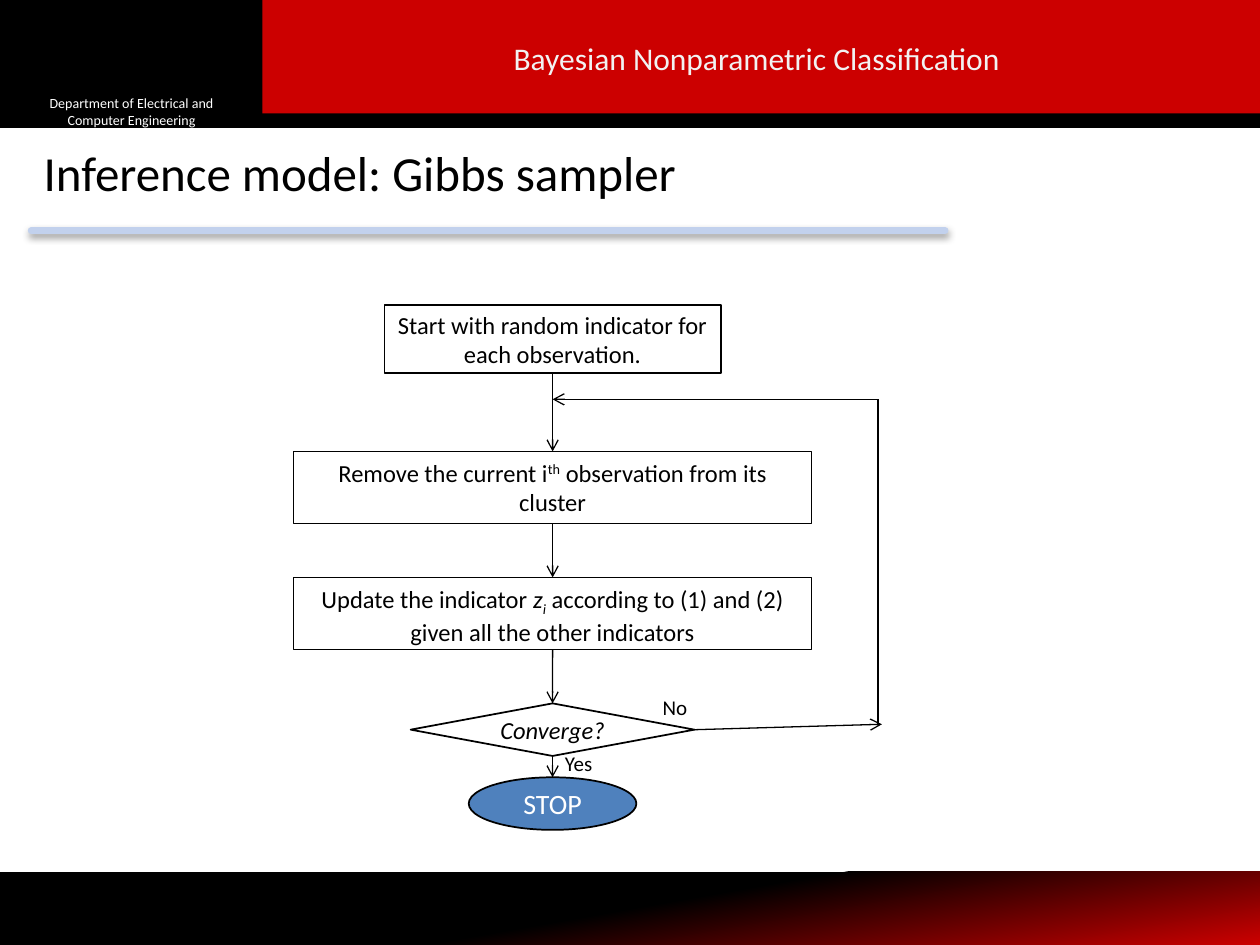
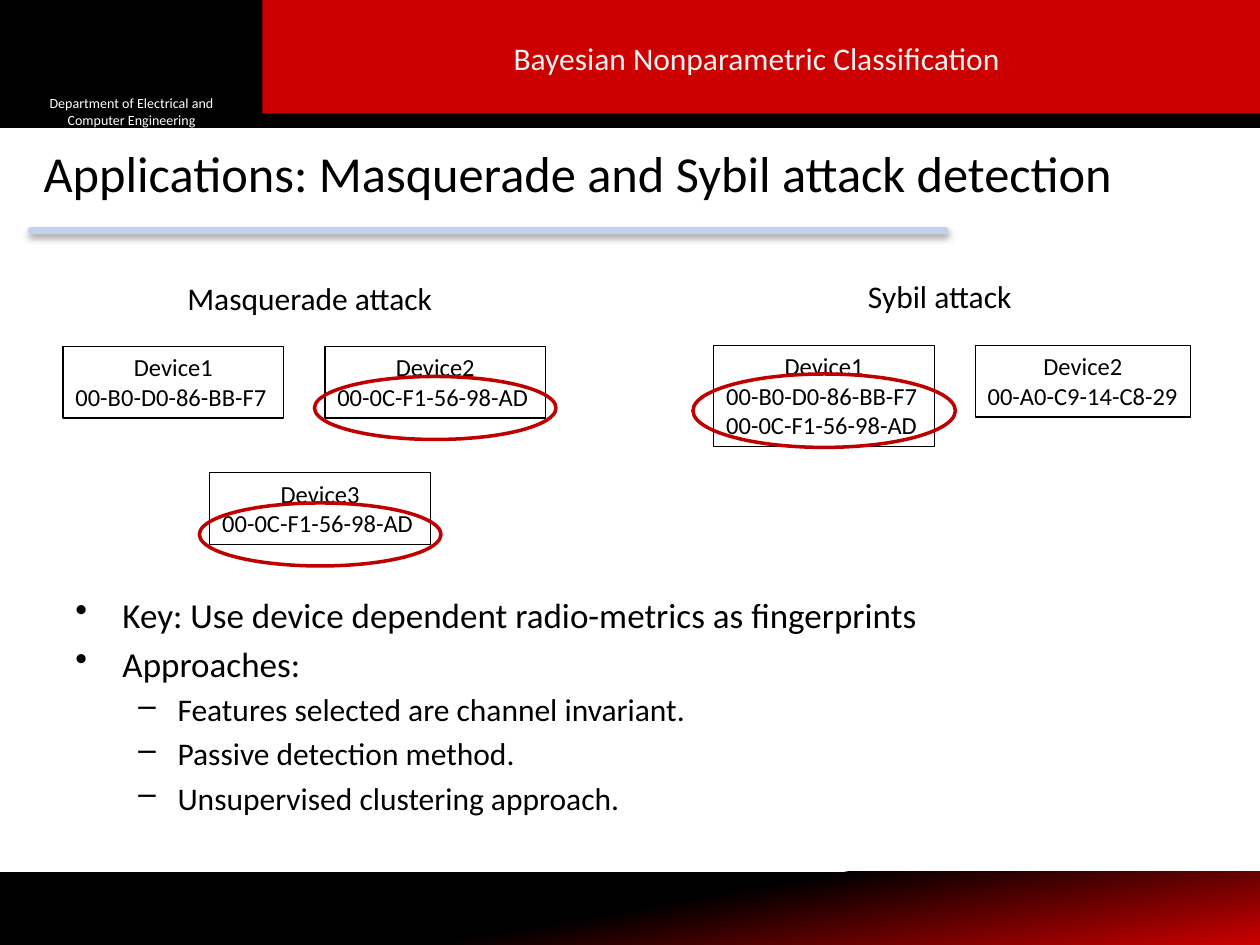
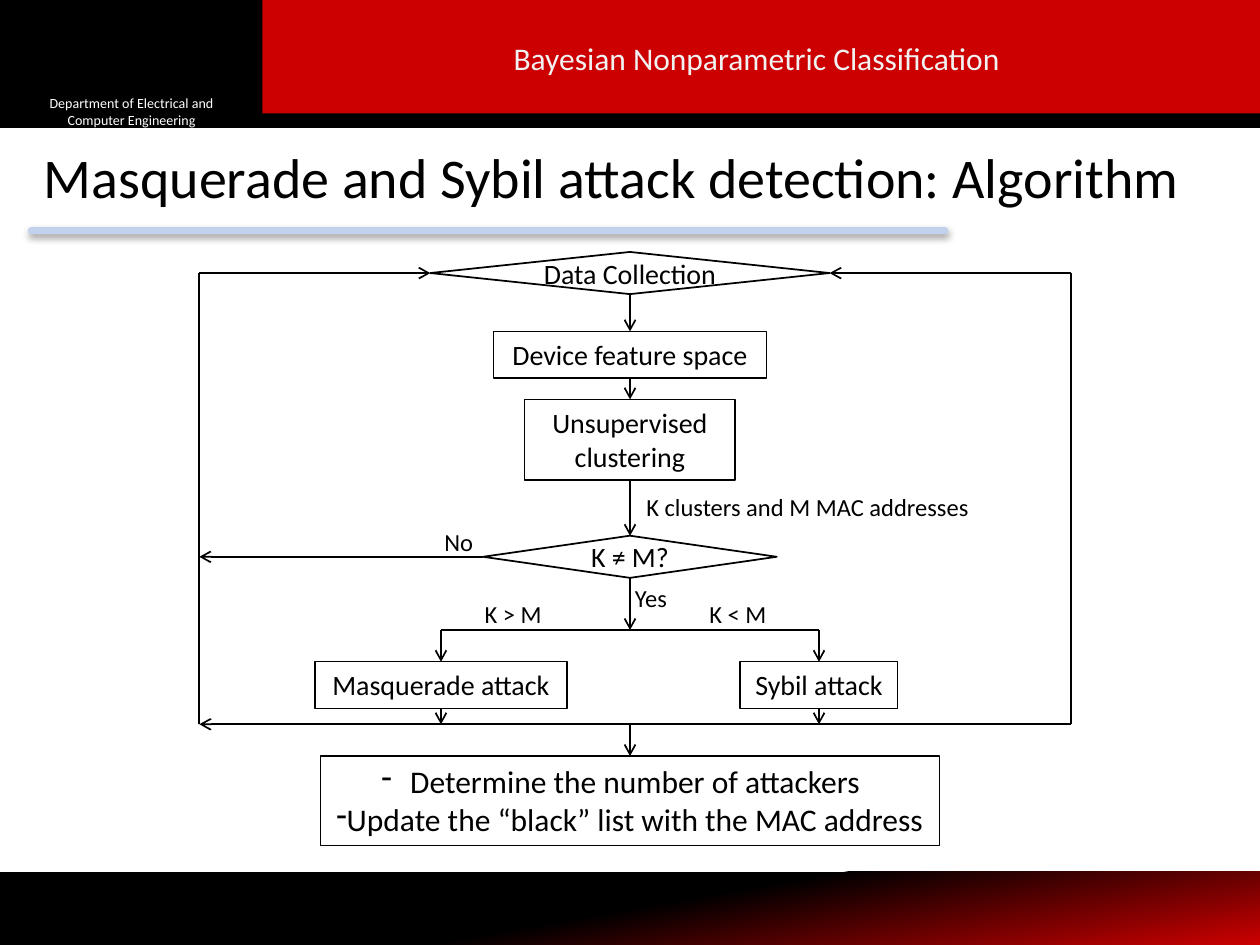
from dataclasses import dataclass

from lxml import etree
from pptx import Presentation
from pptx.dml.color import RGBColor
from pptx.enum.shapes import MSO_CONNECTOR, MSO_SHAPE
from pptx.enum.text import MSO_ANCHOR, PP_ALIGN
from pptx.oxml.ns import qn
from pptx.util import Cm, Pt

BLACK = RGBColor(0x00, 0x00, 0x00)
WHITE = RGBColor(0xFF, 0xFF, 0xFF)
BAND_RED = RGBColor(0xCC, 0x00, 0x00)
HEADER_TEXT = RGBColor(0xF2, 0xF2, 0xF2)
RULE_BLUE = RGBColor(0xC2, 0xD1, 0xED)
STOP_BLUE = RGBColor(0x4F, 0x81, 0xBD)
HALO_RED = RGBColor(0xC0, 0x00, 0x00)
FONT = "Calibri"

RECT, OVAL = MSO_SHAPE.RECTANGLE, MSO_SHAPE.OVAL
DIAMOND, DECISION = MSO_SHAPE.DIAMOND, MSO_SHAPE.FLOWCHART_DECISION
STRAIGHT = MSO_CONNECTOR.STRAIGHT
TOP, MIDDLE = MSO_ANCHOR.TOP, MSO_ANCHOR.MIDDLE
LEFT, CENTER, JUSTIFY = PP_ALIGN.LEFT, PP_ALIGN.CENTER, PP_ALIGN.JUSTIFY

SLIDE_WIDTH, SLIDE_HEIGHT = 25.4, 19.05


@dataclass(frozen=True)
class Box:
    """A rectangle on the slide, in centimetres."""
    left: float
    top: float
    width: float
    height: float

    @property
    def right(self):
        return self.left + self.width

    @property
    def bottom(self):
        return self.top + self.height

    @property
    def mid_x(self):
        return self.left + self.width / 2

    @property
    def mid_y(self):
        return self.top + self.height / 2

    def area(self, dx, dy, width, height):
        return Box(self.left + dx, self.top + dy, width, height)

    def centred(self, axis, dy, width, height):
        """An area whose middle lies at the distance axis from the left."""
        return self.area(axis - width / 2, dy, width, height)

    def lengths(self):
        return Cm(self.left), Cm(self.top), Cm(self.width), Cm(self.height)


def style_text(frame, size, color=BLACK, align=LEFT, anchor=TOP, wrap=True):
    frame.word_wrap = wrap
    frame.vertical_anchor = anchor
    for paragraph in frame.paragraphs:
        paragraph.alignment = align
        for run in paragraph.runs:
            run.font.name = FONT
            run.font.size = Pt(size)
            run.font.color.rgb = color


def add_text(slide, box, text, size, **style):
    frame = slide.shapes.add_textbox(*box.lengths()).text_frame
    frame.text = text
    style_text(frame, size, **style)
    return frame


def add_node(slide, box, text="", size=14, kind=RECT, fill=None, line=BLACK,
             line_width=0.75, **style):
    """Draw a shape; text is a string, or a list of (words, italic, baseline)."""
    node = slide.shapes.add_shape(kind, *box.lengths())
    node.shadow.inherit = False
    if fill is None:
        node.fill.background()
    else:
        node.fill.solid()
        node.fill.fore_color.rgb = fill
    if line is None:
        node.line.fill.background()
    else:
        node.line.color.rgb = line
        node.line.width = Pt(line_width)
    frame = node.text_frame
    if isinstance(text, str):
        frame.text = text
    else:
        for words, italic, baseline in text:
            run = frame.paragraphs[0].add_run()
            run.text = words
            run.font.italic = italic
            if baseline:
                run.font._element.set("baseline", str(baseline * 1000))
    style_text(frame, size, **{"align": CENTER, **style})
    return node


def add_route(slide, *points, width=1, color=BLACK, arrow=True):
    """Join the points by straight lines, with an arrowhead at the last one."""
    for start, end in zip(points, points[1:]):
        leg = slide.shapes.add_connector(
            STRAIGHT, *(Cm(value) for value in (*start, *end)))
        leg.line.color.rgb = color
        leg.line.width = Pt(width)
        properties = leg._element.spPr
        if arrow and end == points[-1]:
            etree.SubElement(properties.find(qn("a:ln")), qn("a:tailEnd"), type="arrow")
        etree.SubElement(properties, qn("a:effectLst"))
    return leg


def link_down(slide, boxes, width):
    for upper, lower in zip(boxes, boxes[1:]):
        add_route(slide, (upper.mid_x, upper.bottom), (lower.mid_x, lower.top), width=width)


def set_bullet(paragraph, mark, margin, hanging):
    properties = paragraph._p.get_or_add_pPr()
    properties.set("marL", str(Cm(margin)))
    properties.set("indent", str(Cm(-hanging)))
    etree.SubElement(properties, qn("a:buChar"), char=mark)


def add_header(slide, box):
    add_node(slide, box, fill=BLACK, line_width=2)
    add_node(slide, box.area(5.29, 0, box.width - 5.29, 2.29), fill=BAND_RED, line=None)
    add_node(slide, box.area(0.43, 1.93, 4.45, 0.64),
             "Department of Electrical and Computer Engineering", 8,
             fill=BLACK, line=None, color=WHITE, anchor=MIDDLE)
    add_text(slide, box.area(6.15, 0.43, 18.21, 1.47), "Bayesian Nonparametric Classification",
             18, color=HEADER_TEXT, align=CENTER, anchor=MIDDLE)


def add_footer(slide, box):
    band = add_node(slide, box, line=None)
    band.fill.gradient()
    band.fill.gradient_angle = 280
    for stop, (position, color) in zip(band.fill.gradient_stops,
                                       ((0.5, BLACK), (1, BAND_RED))):
        stop.position = position
        stop.color.rgb = color


def add_title(slide, box, title, size):
    add_text(slide, box, title, size)
    rule_y = box.top + 1.9
    rule = add_route(slide, (box.left, rule_y), (19.05, rule_y),
                     width=4, color=RULE_BLUE, arrow=False)
    properties = rule._element.spPr
    properties.find(qn("a:ln")).set("cap", "rnd")
    shadow = etree.SubElement(properties.find(qn("a:effectLst")), qn("a:outerShdw"),
                              blurRad=str(Pt(4)), dist=str(Pt(2)), dir=str(85 * 60000))
    shadow_color = etree.SubElement(shadow, qn("a:srgbClr"), val=str(BLACK))
    etree.SubElement(shadow_color, qn("a:alpha"), val="40000")


def new_slide(deck, title, title_size):
    slide = deck.slides.add_slide(deck.slide_layouts[6])
    add_footer(slide, Box(0, 17.57, SLIDE_WIDTH, SLIDE_HEIGHT - 17.57))
    add_header(slide, Box(0, 0, SLIDE_WIDTH, 2.54))
    add_title(slide, Box(0.63, 2.75, 24, 2.11), title, title_size)
    return slide


def add_sampler_flow(slide, box):
    axis = 5.22
    start = box.centred(axis, 0, 6.78, 1.37)
    remove = box.centred(axis, 2.95, 10.44, 1.45)
    update = box.centred(axis, 5.49, 10.44, 1.45)
    converge = box.centred(axis, 8.03, 5.72, 1.06)
    stop = box.centred(axis, 9.52, 3.38, 1.06)

    add_node(slide, start, "Start with random indicator for each observation.",
             line_width=1, anchor=MIDDLE)
    add_node(slide, remove, [("Remove the current i", False, 0), ("th", False, 30),
                             (" observation from its cluster", False, 0)])
    add_node(slide, update, [("Update the indicator ", False, 0), ("z", True, 0),
                             ("i", True, -25),
                             (" according to (1) and (2) given all the other indicators",
                              False, 0)])
    add_node(slide, converge, [("Converge?", True, 0)], kind=DECISION,
             line_width=1, anchor=MIDDLE, wrap=False)
    add_node(slide, stop, "STOP", 16, kind=OVAL, fill=STOP_BLUE, line_width=1,
             color=WHITE, anchor=MIDDLE, wrap=False)

    link_down(slide, (start, remove, update, converge, stop), 0.75)
    loop_start, loop_end = box.top + 8.45, box.top + 1.9
    add_route(slide, (converge.right, converge.mid_y), (box.right + 0.08, loop_start),
              width=0.75)
    add_route(slide, (box.right, loop_start), (box.right, loop_end),
              (start.mid_x, loop_end), width=0.75)
    add_text(slide, box.area(axis, 8.86, 1.07, 0.76), "Yes", 12, wrap=False)
    add_text(slide, box.area(7.19, 7.72, 1.02, 0.76), "No", 12, wrap=False)


def add_attack_panel(slide, box, heading, devices, halo):
    """Place devices (dx, dy, width, name, addresses, spoofed) under a heading.

    The halo (margin, dy, height) rings the addresses of a spoofed device.
    """
    add_text(slide, box, heading, 18, align=CENTER)
    margin, halo_dy, halo_height = halo
    for dx, dy, width, name, addresses, spoofed in devices:
        lines = [name, *addresses]
        device = box.area(dx, dy, width, 0.25 + 0.6 * len(lines))
        frame = add_node(slide, device, "\n".join(lines), align=LEFT, wrap=False).text_frame
        frame.paragraphs[0].alignment = CENTER
        if spoofed:
            add_node(slide, device.area(-margin, halo_dy, width + 2 * margin, halo_height),
                     kind=OVAL, line=HALO_RED, line_width=2)


def add_approaches(slide, box):
    points = (
        (0, "Key: Use device dependent radio-metrics as fingerprints"),
        (0, "Approaches:"),
        (1, "Features selected are channel invariant."),
        (1, "Passive detection method."),
        (1, "Unsupervised clustering approach."),
    )
    levels = (("•", 0.95, 0.95, 20), ("–", 2.06, 0.79, 18))
    frame = add_text(slide, box, "\n".join(text for _, text in points), 20, align=JUSTIFY)
    for index, (paragraph, (level, _)) in enumerate(zip(frame.paragraphs, points)):
        mark, margin, hanging, size = levels[level]
        set_bullet(paragraph, mark, margin, hanging)
        paragraph.level = level
        paragraph.runs[0].font.size = Pt(size)
        if index:
            paragraph.space_before = Pt(size * 0.2)


def add_detection_flow(slide, box):
    axis, spread = 8.68, 3.81
    collection = box.centred(axis, 0, 8.05, 0.85)
    features = box.centred(axis, 1.6, 5.51, 0.94)
    clustering = box.centred(axis, 2.97, 4.24, 1.63)
    comparison = box.centred(axis, 5.72, 5.92, 0.85)
    masquerade = box.centred(axis - spread, 8.26, 5.08, 0.94)
    sybil = box.centred(axis + spread, 8.26, 3.18, 0.94)
    response = box.centred(axis, 10.16, 12.47, 1.8)
    branch_y, merge_y = box.top + 7.62, box.top + 9.52
    axis_x = collection.mid_x

    for node, text in ((collection, "Data Collection"), (comparison, "K ≠ M?")):
        add_node(slide, node, text, 16, kind=DIAMOND, line_width=1,
                 anchor=MIDDLE, wrap=False)
    for node, text in ((features, "Device feature space"),
                       (clustering, "Unsupervised\nclustering"),
                       (masquerade, "Masquerade attack"), (sybil, "Sybil attack")):
        add_node(slide, node, text, 16)
    actions = add_node(slide, response, "Determine the number of attackers\n"
                       "Update the “black” list with the MAC address", 18, wrap=False)
    for paragraph, hanging in zip(actions.text_frame.paragraphs, (0.58, 0.2)):
        set_bullet(paragraph, "-", 0.2, hanging)

    link_down(slide, (collection, features, clustering, comparison), 1)
    add_route(slide, (axis_x, comparison.bottom), (axis_x, branch_y))
    add_route(slide, (axis_x, merge_y), (axis_x, response.top))
    add_route(slide, (comparison.left, comparison.mid_y), (box.left, comparison.mid_y))
    add_route(slide, (masquerade.mid_x, merge_y), (box.left, merge_y))
    for y in (branch_y, merge_y):
        add_route(slide, (masquerade.mid_x, y), (sybil.mid_x, y), arrow=False)
    for attack in (masquerade, sybil):
        add_route(slide, (attack.mid_x, branch_y), (attack.mid_x, attack.top))
        add_route(slide, (attack.mid_x, attack.bottom), (attack.mid_x, merge_y))
    add_route(slide, (box.left, merge_y), (box.left, collection.mid_y),
              (collection.left, collection.mid_y))
    add_route(slide, (sybil.mid_x, merge_y), (box.right, merge_y),
              (box.right, collection.mid_y), (collection.right, collection.mid_y))

    for dx, dy, width, label in ((8.76, 4.72, 7.06, "K clusters and M MAC addresses"),
                                 (4.69, 5.41, 1.09, "No"), (8.53, 6.55, 1.17, "Yes"),
                                 (5.5, 6.88, 1.68, "K > M"), (10.03, 6.88, 1.68, "K < M")):
        add_text(slide, box.area(dx, dy, width, 0.86), label, 14, wrap=False)


def main():
    deck = Presentation()
    deck.slide_width, deck.slide_height = Cm(SLIDE_WIDTH), Cm(SLIDE_HEIGHT)

    sampler = new_slide(deck, "Inference model: Gibbs sampler", 28)
    add_sampler_flow(sampler, Box(5.92, 6.15, 11.78, 10.58))

    applications = new_slide(deck, "Applications: Masquerade and Sybil attack detection", 28.8)
    first, shared = "00-B0-D0-86-BB-F7", "00-0C-F1-56-98-AD"
    add_attack_panel(applications, Box(0.63, 5.51, 11.23, 1.02), "Masquerade attack", (
        (0.64, 1.47, 4.45, "Device1", [first], False),
        (5.92, 1.47, 4.45, "Device2", [shared], True),
        (3.6, 4.02, 4.45, "Device3", [shared], True),
    ), halo=(0.21, 0.61, 1.27))
    add_attack_panel(applications, Box(13.33, 5.46, 11.23, 1.02), "Sybil attack", (
        (1.06, 1.5, 4.45, "Device1", [first, shared], True),
        (6.33, 1.5, 4.34, "Device2", ["00-A0-C9-14-C8-29"], False),
    ), halo=(0.42, 0.58, 1.48))
    add_approaches(applications, Box(1.27, 11.83, 22.86, 5.1))

    algorithm = new_slide(deck, "Masquerade and Sybil attack detection: Algorithm", 32)
    add_detection_flow(algorithm, Box(4.02, 5.08, 17.57, 11.96))

    deck.save("out.pptx")


if __name__ == "__main__":
    main()
